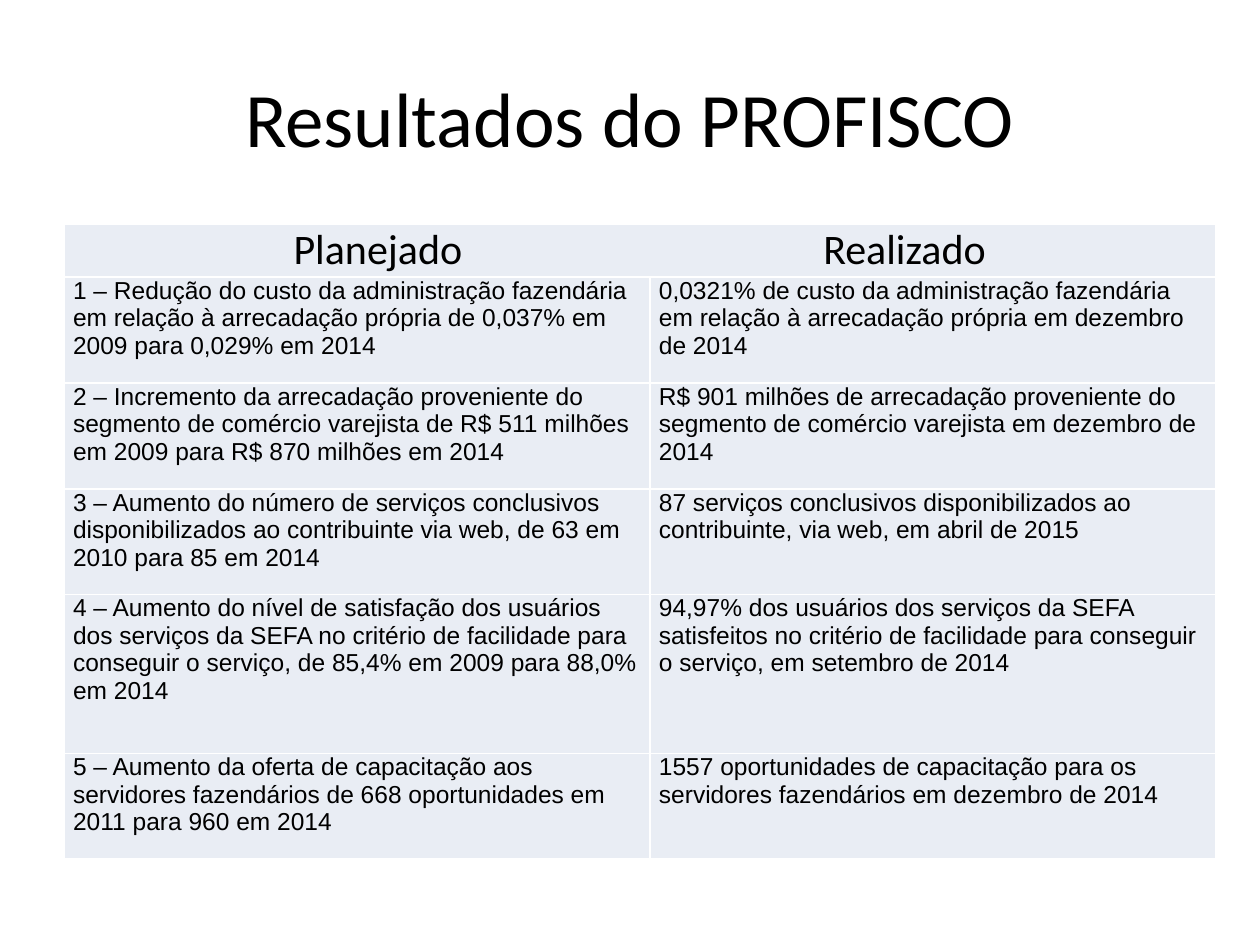
import pptx
import pptx.util
import pptx.oxml
import pptx.oxml.ns
import pptx.dml.color
import pptx.enum.text

IN = pptx.util.Inches
PP_ALIGN = pptx.enum.text.PP_ALIGN
ANCHOR = pptx.enum.text.MSO_ANCHOR

THEME = {
    "text": "000000", "cell": "E9EDF4", "border": "FFFFFF",
    "heading_font": "Calibri", "body_font": "Arial",
    "title": 44, "header": 24, "body": 14,
}
W, H = 10, 7.5
ROW = 0.42                      # height of one table row unit
ROW_UNITS = [1, 2, 2, 2, 3, 2]
COLS = [4.65, 4.49]
HEADER_TABS = [2.42, 6.6]       # centres of the two headings

RESULTS = [
    ("1 – Redução do custo da administração fazendária em relação à arrecadação própria de 0,037% em 2009 para 0,029% em 2014",
     "0,0321% de custo da administração fazendária em relação à arrecadação própria em dezembro de 2014"),
    ("2 – Incremento da arrecadação proveniente do segmento de comércio varejista de R$ 511 milhões em 2009 para R$ 870 milhões em 2014",
     "R$ 901 milhões de arrecadação proveniente do segmento de comércio varejista em dezembro de 2014"),
    ("3 – Aumento do número de serviços conclusivos disponibilizados ao contribuinte via web, de 63 em 2010 para 85 em 2014",
     "87 serviços conclusivos disponibilizados ao contribuinte, via web, em abril de 2015"),
    ("4 – Aumento do nível de satisfação dos usuários dos serviços da SEFA no critério de facilidade para conseguir o serviço, de 85,4% em 2009 para 88,0% em 2014",
     "94,97% dos usuários dos serviços da SEFA satisfeitos no critério de facilidade para conseguir o serviço, em setembro de 2014"),
    ("5 – Aumento da oferta de capacitação aos servidores fazendários de 668 oportunidades em 2011 para 960 em 2014",
     "1557 oportunidades de capacitação para os servidores fazendários em dezembro de 2014"),
]


def write(tf, text, size="body", font="body_font", align=PP_ALIGN.LEFT, tabs=()):
    """Fill the first paragraph of tf; tabs are centred stops in inches."""
    p = tf.paragraphs[0]
    p.alignment = align
    if tabs:
        stops = pptx.oxml.ns.qn("a:tabLst")
        tab_list = p._p.get_or_add_pPr().makeelement(stops, {})
        p._p.get_or_add_pPr().append(tab_list)
        for pos in tabs:
            tab_list.append(tab_list.makeelement(
                pptx.oxml.ns.qn("a:tab"), {"pos": str(IN(pos)), "algn": "ctr"}))
    r = p.add_run()
    r.text = text
    r.font.size = pptx.util.Pt(THEME[size])
    r.font.name = THEME[font]
    r.font.color.rgb = pptx.dml.color.RGBColor.from_string(THEME["text"])


def style_cell(cell):
    cell.margin_left = cell.margin_right = IN(0.07)
    cell.margin_top = cell.margin_bottom = 0
    tc_pr = cell._tc.get_or_add_tcPr()
    for side in ("lnL", "lnR", "lnT", "lnB"):
        tc_pr.append(pptx.oxml.parse_xml(
            f'<a:{side} {pptx.oxml.ns.nsdecls("a")} w="{pptx.util.Pt(1)}"><a:solidFill>'
            f'<a:srgbClr val="{THEME["border"]}"/></a:solidFill></a:{side}>'))
    cell.fill.solid()
    cell.fill.fore_color.rgb = pptx.dml.color.RGBColor.from_string(THEME["cell"])


prs = pptx.Presentation()
prs.slide_width, prs.slide_height = IN(W), IN(H)
s = prs.slides.add_slide(prs.slide_layouts[6])

title = s.shapes.add_textbox(IN(W * 0.05), IN(H * 0.04), IN(W * 0.9), IN(1.25))
tf = title.text_frame
tf.word_wrap = True
tf.vertical_anchor = ANCHOR.MIDDLE
write(tf, "Resultados do PROFISCO", size="title", font="heading_font",
      align=PP_ALIGN.CENTER)

table = s.shapes.add_table(len(ROW_UNITS), len(COLS), IN(0.51), IN(1.78),
                           IN(sum(COLS)), IN(ROW * sum(ROW_UNITS))).table
for column, width in zip(table.columns, COLS):
    column.width = IN(width)
for row, units in zip(table.rows, ROW_UNITS):
    row.height = IN(ROW * units)
for cell in table.iter_cells():
    style_cell(cell)

header = table.cell(0, 0)
header.merge(table.cell(0, 1))
write(header.text_frame, "\tPlanejado\tRealizado", size="header",
      font="heading_font", tabs=HEADER_TABS)

for i, result in enumerate(RESULTS, start=1):
    for j, text in enumerate(result):
        write(table.cell(i, j).text_frame, text)

prs.save("out.pptx")
